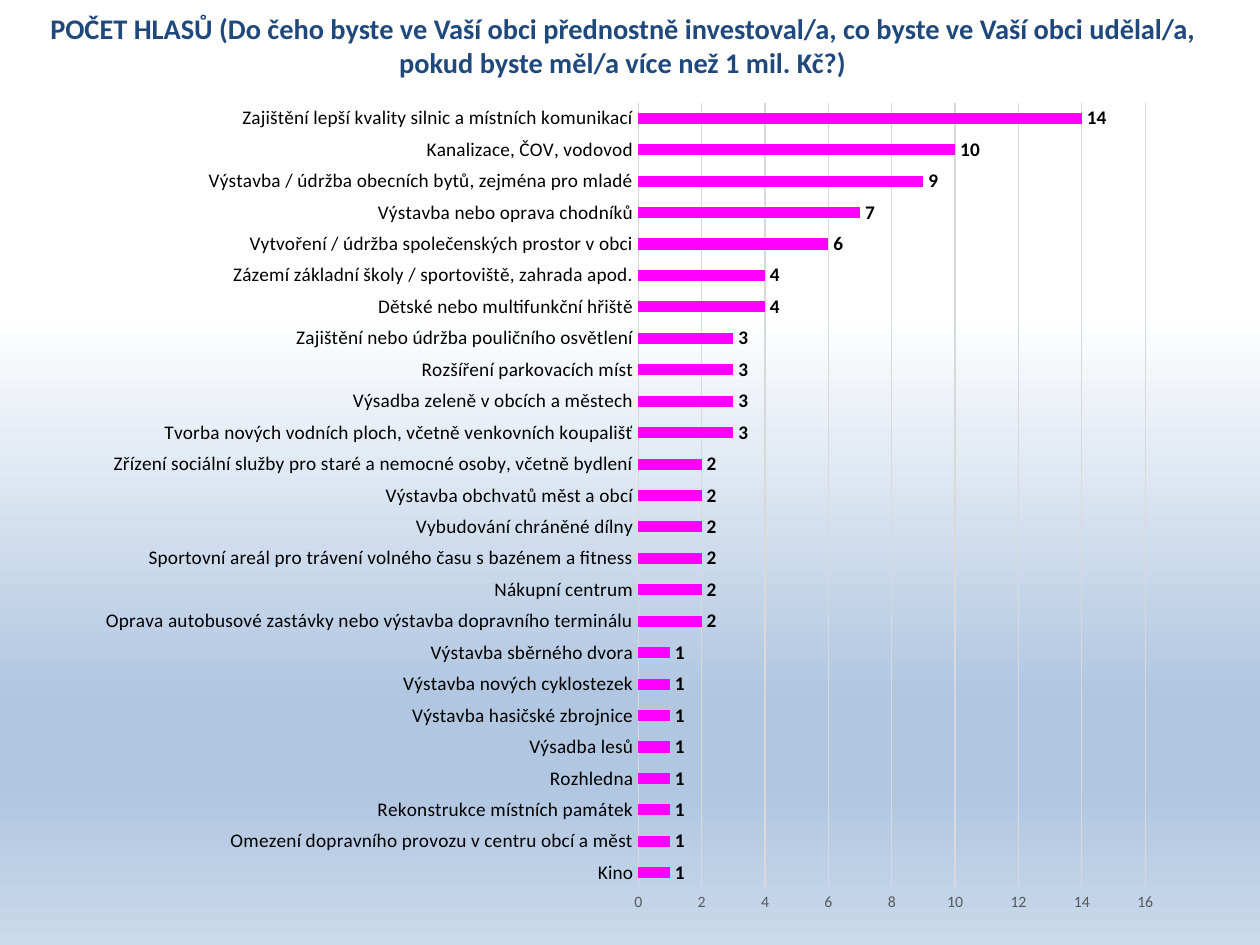
import pptx
import pptx.chart.data
import pptx.dml.color
import pptx.enum.chart
import pptx.enum.text
import pptx.oxml
import pptx.oxml.ns
import pptx.util

Pt = pptx.util.Pt
RGBColor = pptx.dml.color.RGBColor
qn = pptx.oxml.ns.qn

NAVY = RGBColor(0x1F, 0x49, 0x7D)
BLACK = RGBColor(0, 0, 0)
GRAY = RGBColor(0x59, 0x59, 0x59)
LIGHT_GRAY = RGBColor(0xD9, 0xD9, 0xD9)
MAGENTA = RGBColor(0xFF, 0, 0xFF)
WHITE = RGBColor(0xFF, 0xFF, 0xFF)
BLUE = RGBColor(0xB0, 0xC6, 0xE1)
PALE_BLUE = RGBColor(0xCA, 0xD9, 0xEB)

TITLE = ("POČET HLASŮ (Do čeho byste ve Vaší obci přednostně investoval/a, "
         "co byste ve Vaší obci udělal/a, pokud byste měl/a více než 1 mil. Kč?)")

# Bars run from the bottom of the chart upwards
VOTES = [
    ("Kino", 1),
    ("Omezení dopravního provozu v centru obcí a měst", 1),
    ("Rekonstrukce místních památek", 1),
    ("Rozhledna", 1),
    ("Výsadba lesů", 1),
    ("Výstavba hasičské zbrojnice", 1),
    ("Výstavba nových cyklostezek", 1),
    ("Výstavba sběrného dvora", 1),
    ("Oprava autobusové zastávky nebo výstavba dopravního terminálu", 2),
    ("Nákupní centrum", 2),
    ("Sportovní areál pro trávení volného času s bazénem a fitness", 2),
    ("Vybudování chráněné dílny", 2),
    ("Výstavba obchvatů měst a obcí", 2),
    ("Zřízení sociální služby pro staré a nemocné osoby, včetně bydlení", 2),
    ("Tvorba nových vodních ploch, včetně venkovních koupališť", 3),
    ("Výsadba zeleně v obcích a městech", 3),
    ("Rozšíření parkovacích míst", 3),
    ("Zajištění nebo údržba pouličního osvětlení", 3),
    ("Dětské nebo multifunkční hřiště", 4),
    ("Zázemí základní školy / sportoviště, zahrada apod.", 4),
    ("Vytvoření / údržba společenských prostor v obci", 6),
    ("Výstavba nebo oprava chodníků", 7),
    ("Výstavba / údržba obecních bytů, zejména pro mladé", 9),
    ("Kanalizace, ČOV, vodovod", 10),
    ("Zajištění lepší kvality silnic a místních komunikací", 14),
]


def set_all(obj, values):
    for name, value in values.items():
        setattr(obj, name, value)


class SlideBuilder:
    font_name = "Calibri"

    def __init__(self, s):
        self.s = s

    def font(self, font, size, color, bold=False):
        set_all(font, {"name": self.font_name, "size": Pt(size), "bold": bold})
        font.color.rgb = color

    def line(self, line, color, width=0.75):
        line.color.rgb = color
        line.width = Pt(width)

    def background(self, stops):
        fill = self.s.background.fill
        fill.gradient()
        fill.gradient_angle = 270
        gs_list = self.s.element.find(".//" + qn("a:gsLst"))
        for gs in list(gs_list):
            gs_list.remove(gs)
        for percent, color in stops:
            gs_list.append(pptx.oxml.parse_xml(
                f'<a:gs {pptx.oxml.ns.nsdecls("a")} pos="{percent * 1000}">'
                f'<a:srgbClr val="{color}"/></a:gs>'))

    def title(self, text, left, top, width, height):
        sp = self.s.shapes.title
        set_all(sp, {"left": Pt(left), "top": Pt(top),
                     "width": Pt(width), "height": Pt(height)})
        tf = sp.text_frame
        set_all(tf, {"word_wrap": True,
                     "auto_size": pptx.enum.text.MSO_AUTO_SIZE.NONE,
                     "vertical_anchor": pptx.enum.text.MSO_ANCHOR.MIDDLE})
        p = tf.paragraphs[0]
        p.alignment = pptx.enum.text.PP_ALIGN.CENTER
        r = p.add_run()
        r.text = text
        self.font(r.font, 16.2, NAVY, bold=True)

    def bar_chart(self, rows, left, top, width, height):
        data = pptx.chart.data.CategoryChartData()
        data.categories = [name for name, _ in rows]
        data.add_series("Series 1", [votes for _, votes in rows])
        chart = self.s.shapes.add_chart(
            pptx.enum.chart.XL_CHART_TYPE.BAR_CLUSTERED,
            Pt(left), Pt(top), Pt(width), Pt(height), data).chart
        set_all(chart, {"has_legend": False, "has_title": False})
        self.font(chart.font, 10, BLACK)

        # Bars and their values
        plot = chart.plots[0]
        set_all(plot, {"gap_width": 182, "vary_by_categories": False,
                       "has_data_labels": True})
        fill = plot.series[0].format.fill
        fill.solid()
        fill.fore_color.rgb = MAGENTA
        labels = plot.data_labels
        set_all(labels, {"show_value": True,
                         "position": pptx.enum.chart.XL_LABEL_POSITION.OUTSIDE_END})
        self.font(labels.font, 11, BLACK, bold=True)

        # Axes
        cat_axis, val_axis = chart.category_axis, chart.value_axis
        for axis, size, color in ((cat_axis, 11, BLACK), (val_axis, 9, GRAY)):
            set_all(axis, {"major_tick_mark": pptx.enum.chart.XL_TICK_MARK.NONE,
                           "minor_tick_mark": pptx.enum.chart.XL_TICK_MARK.NONE})
            self.font(axis.tick_labels.font, size, color)
        set_all(val_axis, {"minimum_scale": 0, "maximum_scale": 16,
                           "major_unit": 2, "has_major_gridlines": True})
        self.line(cat_axis.format.line, LIGHT_GRAY)
        self.line(val_axis.major_gridlines.format.line, LIGHT_GRAY)
        val_axis.format.line.fill.background()


def main():
    prs = pptx.Presentation()
    set_all(prs, {"slide_width": Pt(720), "slide_height": Pt(540)})
    builder = SlideBuilder(prs.slides.add_slide(prs.slide_layouts[5]))
    builder.background([(33, WHITE), (74, BLUE), (83, BLUE), (100, PALE_BLUE)])
    builder.title(TITLE, 18, 9.4, 675.4, 33)
    builder.bar_chart(VOTES, 48, 49, 623.5, 481.7)
    prs.save("out.pptx")


if __name__ == "__main__":
    main()
